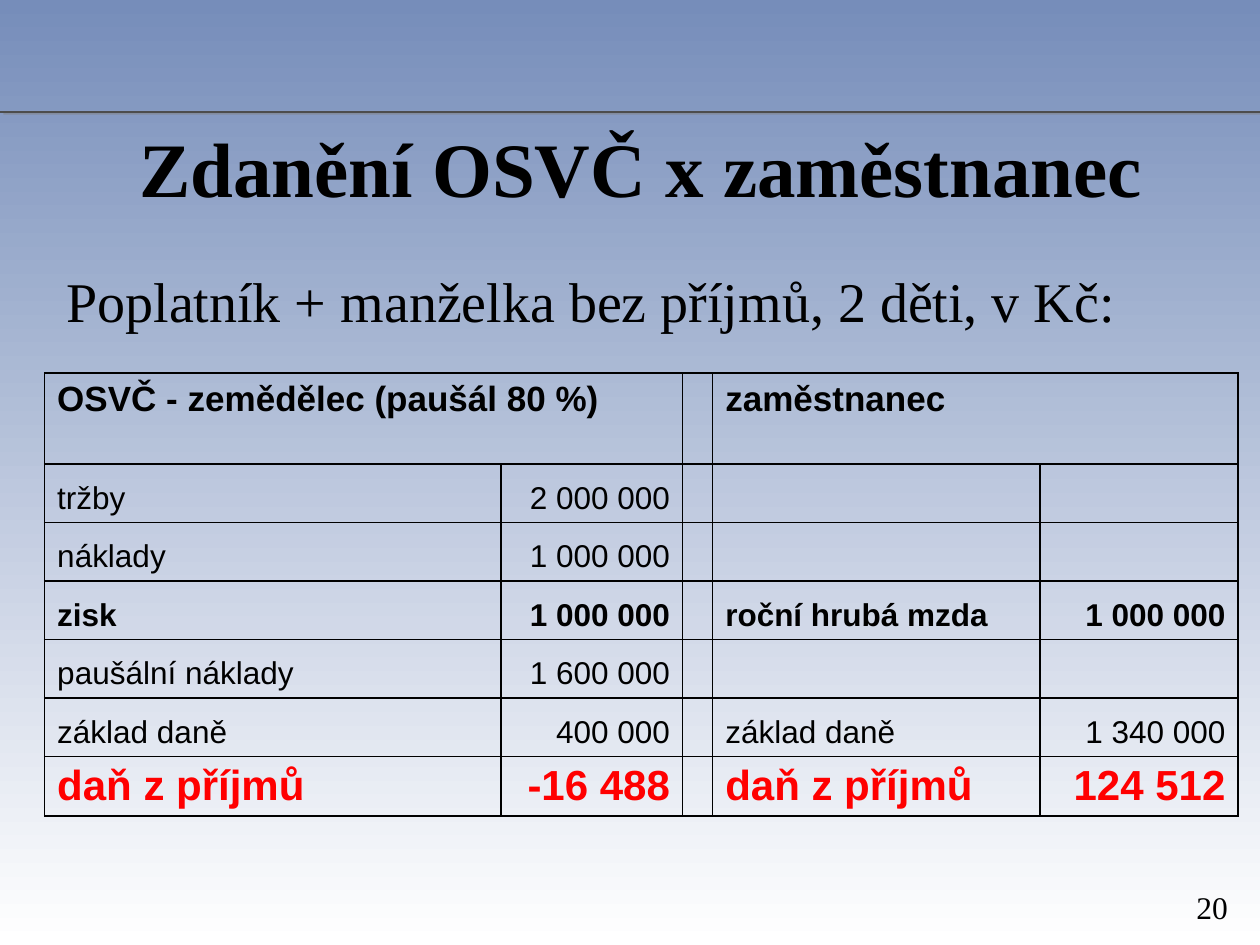
from lxml import etree
from pptx import Presentation
from pptx.dml.color import RGBColor
from pptx.enum.shapes import MSO_CONNECTOR
from pptx.enum.text import MSO_ANCHOR, PP_ALIGN
from pptx.oxml import parse_xml
from pptx.util import Cm, Pt

LEFT, RIGHT, CENTER = PP_ALIGN.LEFT, PP_ALIGN.RIGHT, PP_ALIGN.CENTER
TOP, MIDDLE, BOTTOM = MSO_ANCHOR.TOP, MSO_ANCHOR.MIDDLE, MSO_ANCHOR.BOTTOM
STRAIGHT = MSO_CONNECTOR.STRAIGHT
NS = "http://schemas.openxmlformats.org/drawingml/2006/main"
SERIF, SANS = "Times New Roman", "Arial"
BLACK, RED, GREY, SHADE = "000000", "FF0000", "4D4D4D", "808080"
SKY, WHITE = "768DBA", "FFFFFF"

TITLE = "Zdanění OSVČ x zaměstnanec"
INTRO = "Poplatník + manželka bez příjmů, 2 děti, v Kč:"
PAGE = "20"
ROWS = [
    ("head", ["OSVČ - zemědělec (paušál 80 %)", "", "", "zaměstnanec", ""]),
    ("plain", ["tržby", "2 000 000", "", "", ""]),
    ("plain", ["náklady", "1 000 000", "", "", ""]),
    ("bold", ["zisk", "1 000 000", "", "roční hrubá mzda", "1 000 000"]),
    ("plain", ["paušální náklady", "1 600 000", "", "", ""]),
    ("plain", ["základ daně", "400 000", "", "základ daně", "1 340 000"]),
    ("tax", ["daň z příjmů", "-16 488", "", "daň z příjmů", "124 512"]),
]
STYLES = {
    "head": (20, True, BLACK),
    "plain": (18, False, BLACK),
    "bold": (18, True, BLACK),
    "tax": (24, True, RED),
}
WIDTHS = [9.2, 3.66, 0.6, 6.6, 3.99]
HEAD_H, ROW_H = 1.83, 1.18
SPANS = [(0, 1), (3, 4)]
AMOUNTS = (1, 4)


def color(code):
    """Turn a hex string into a colour."""
    return RGBColor.from_string(code)


def write(frame, text, size, font, bold=False, ink=BLACK, align=LEFT):
    """Write one formatted run into the first paragraph."""
    para = frame.paragraphs[0]
    para.alignment = align
    run = para.add_run()
    run.text = text
    run.font.size, run.font.name, run.font.bold = Pt(size), font, bold
    run.font.color.rgb = color(ink)


def add_text(slide, text, left, top, width, height, size):
    """Add a one-line serif text box."""
    box = slide.shapes.add_textbox(Cm(left), Cm(top), Cm(width), Cm(height))
    box.text_frame.word_wrap = True
    write(box.text_frame, text, size, SERIF)


def add_rule(slide):
    """Draw the shaded line across the slide."""
    rule = slide.shapes.add_connector(STRAIGHT, 0, Cm(2.26), Cm(25.4), Cm(2.26))
    rule.line.width = Pt(1)
    rule.line.color.rgb = color(GREY)
    rule._element.spPr.append(parse_xml(
        f'<a:effectLst xmlns:a="{NS}"><a:outerShdw dist="28000" dir="1620000">'
        f'<a:srgbClr val="{SHADE}"><a:alpha val="50000"/></a:srgbClr>'
        '</a:outerShdw></a:effectLst>'))


def add_borders(cell):
    """Give a cell a thin black line on every side."""
    props = cell._tc.get_or_add_tcPr()
    for spot, side in enumerate("LRTB"):
        edge = etree.Element(f"{{{NS}}}ln{side}", w=str(Pt(1)))
        fill = etree.SubElement(edge, f"{{{NS}}}solidFill")
        etree.SubElement(fill, f"{{{NS}}}srgbClr", val=BLACK)
        props.insert(spot, edge)


def add_grid(slide):
    """Add the tax table."""
    heights = [HEAD_H] + [ROW_H] * (len(ROWS) - 1)
    grid = slide.shapes.add_table(
        len(ROWS), len(WIDTHS), Cm(0.9), Cm(7.52),
        Cm(sum(WIDTHS)), Cm(sum(heights))).table
    grid.first_row = grid.horz_banding = False
    for col, width in zip(grid.columns, WIDTHS):
        col.width = Cm(width)
    for row, height in zip(grid.rows, heights):
        row.height = Cm(height)
    for r, (kind, texts) in enumerate(ROWS):
        size, bold, ink = STYLES[kind]
        for c, text in enumerate(texts):
            cell = grid.cell(r, c)
            cell.fill.background()
            add_borders(cell)
            cell.vertical_anchor = TOP if kind == "head" else BOTTOM
            if text:
                align = RIGHT if c in AMOUNTS else LEFT
                write(cell.text_frame, text, size, SANS, bold, ink, align)
    for start, end in SPANS:
        grid.cell(0, start).merge(grid.cell(0, end))


def main():
    """Build and save the slide."""
    deck = Presentation()
    deck.slide_width, deck.slide_height = Cm(25.4), Cm(19.05)
    slide = deck.slides.add_slide(deck.slide_layouts[5])
    fill = slide.background.fill
    fill.gradient()
    fill.gradient_angle = 270
    for stop, code in zip(fill.gradient_stops, (SKY, WHITE)):
        stop.color.rgb = color(code)
    add_rule(slide)
    title = slide.shapes.title
    title.left, title.top = Cm(1.5), Cm(1.93)
    title.width, title.height = Cm(22.86), Cm(2.87)
    title.text_frame.vertical_anchor = MIDDLE
    write(title.text_frame, TITLE, 44, SERIF, True, BLACK, CENTER)
    add_grid(slide)
    add_text(slide, INTRO, 1.09, 5.25, 23.6, 1.6, 32)
    add_text(slide, PAGE, 23.87, 17.78, 1.5, 1.02, 18)
    deck.save("out.pptx")


if __name__ == "__main__":
    main()
